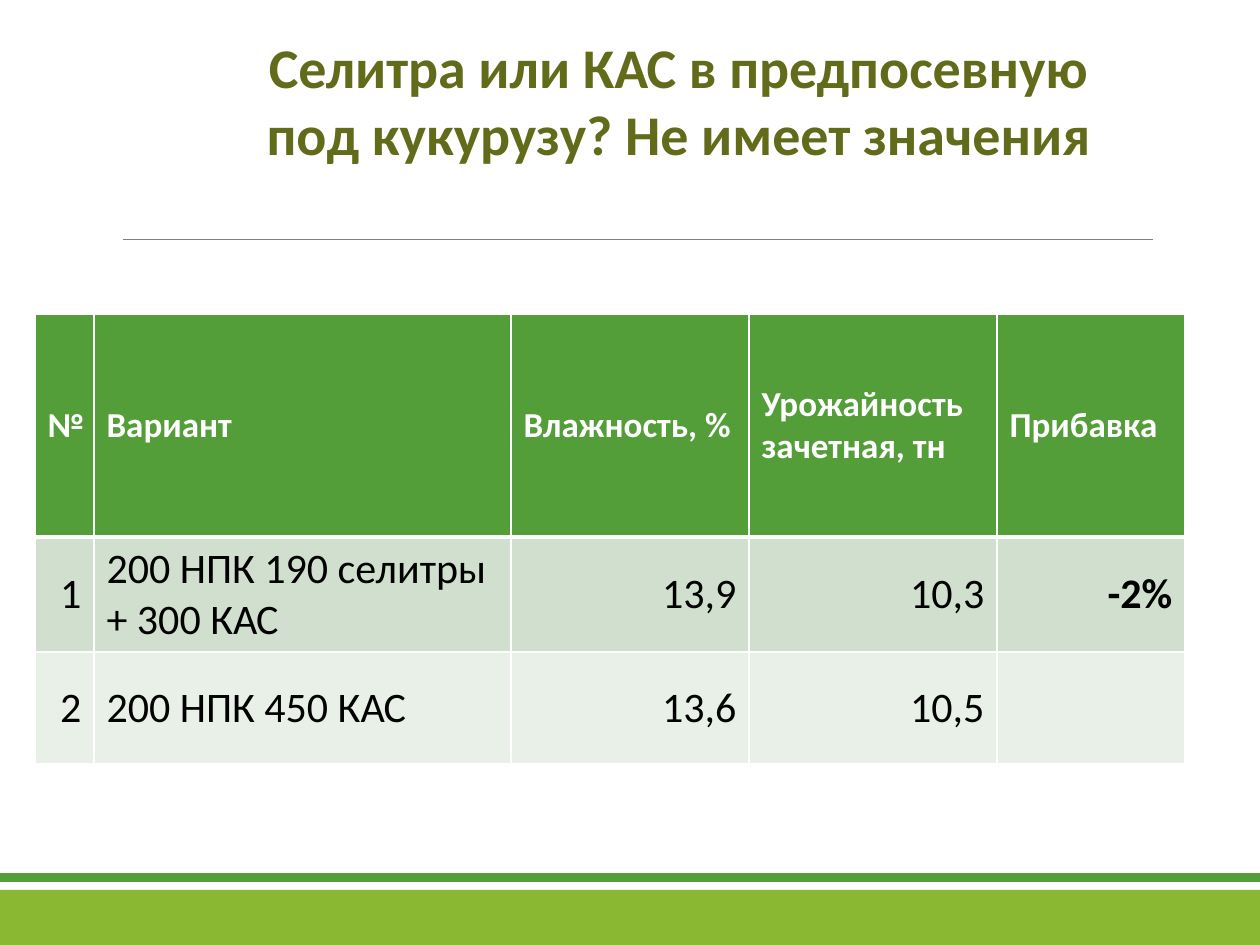
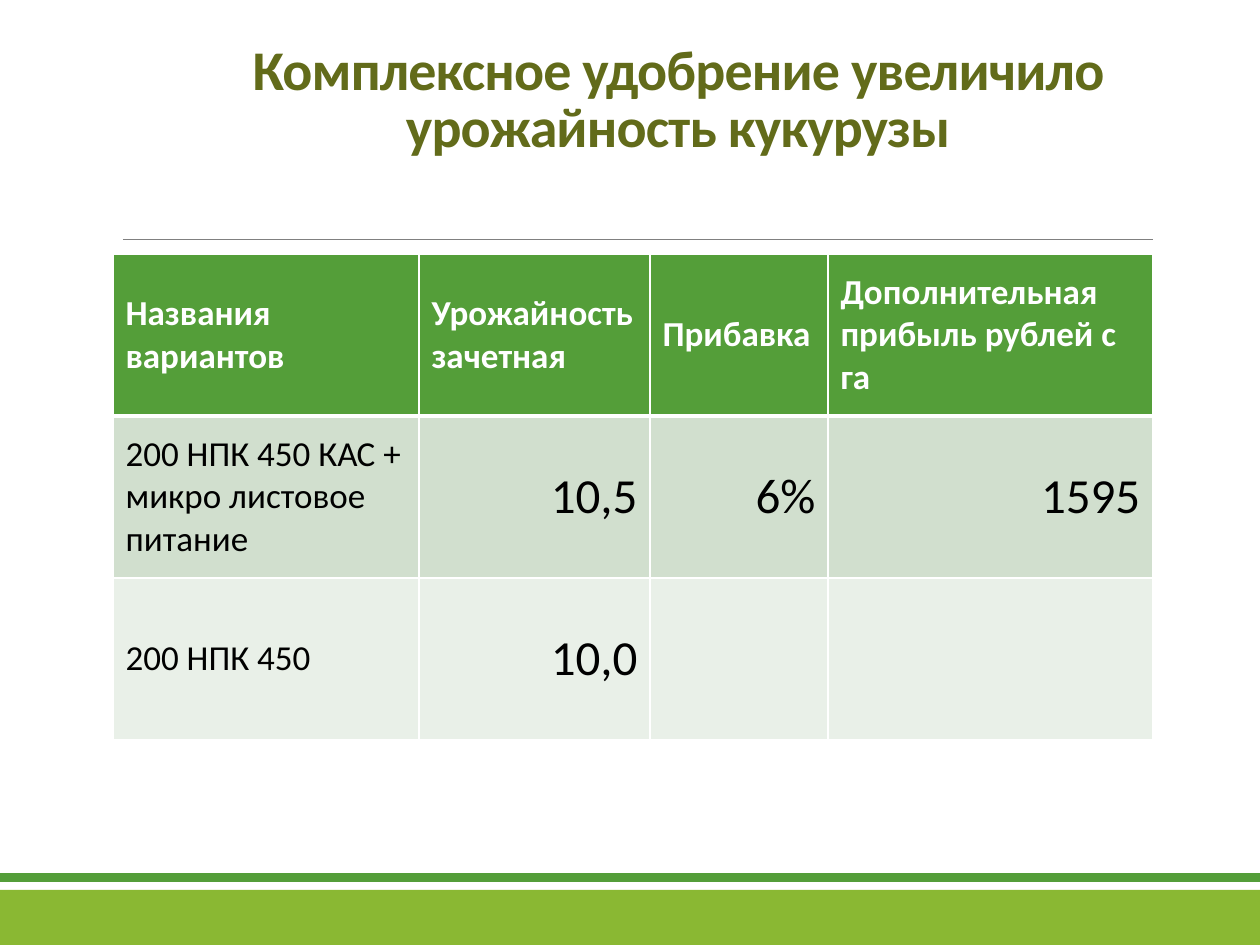
from lxml.etree import SubElement
from pptx import Presentation
from pptx.dml.color import RGBColor
from pptx.enum.shapes import MSO_CONNECTOR, MSO_SHAPE
from pptx.enum.text import MSO_ANCHOR, MSO_AUTO_SIZE, PP_ALIGN
from pptx.oxml.ns import qn
from pptx.util import Emu, Pt

FONT = "Calibri"
OLIVE = RGBColor(0x62, 0x6B, 0x1A)
GREEN = RGBColor(0x54, 0x9E, 0x39)
LIME = RGBColor(0x8A, 0xB8, 0x33)
GRAY = RGBColor(0x80, 0x80, 0x80)
WHITE = RGBColor(0xFF, 0xFF, 0xFF)
BLACK = RGBColor(0, 0, 0)
ROW_TINTS = (RGBColor(0xD1, 0xDF, 0xCE), RGBColor(0xE9, 0xF0, 0xE8))

LEFT, RIGHT = PP_ALIGN.LEFT, PP_ALIGN.RIGHT
WIDTH, HEIGHT = 1260, 945
BANDS = ((890, 55, LIME), (873, 9, GREEN))  # top, height, colour
RULE = (123, 1153, 239)  # left, right, y

# Each column: heading, width, alignment, text size, bold
SLIDES = [
    {
        "title": "Селитра или КАС в предпосевную под кукурузу? Не имеет значения",
        "title_box": (223, 26, 912, 149),
        "anchor": MSO_ANCHOR.TOP,
        "line_spacing": 1.0,
        "tracking": 0,
        "table_at": (35, 314),
        "row_heights": (223, 112, 112),
        "columns": [
            ("№", 59, RIGHT, 24, False),
            ("Вариант", 417, LEFT, 24, False),
            ("Влажность, %", 238, RIGHT, 24, False),
            ("Урожайность зачетная, тн", 248, RIGHT, 24, False),
            ("Прибавка", 188, RIGHT, 24, True),
        ],
        "rows": [
            ("1", "200 НПК 190 селитры + 300 КАС", "13,9", "10,3", "-2%"),
            ("2", "200 НПК 450 КАС", "13,6", "10,5", ""),
        ],
    },
    {
        "title": "Комплексное удобрение увеличило урожайность кукурузы",
        "title_box": (203, 39, 950, 126),
        "anchor": MSO_ANCHOR.MIDDLE,
        "line_spacing": 0.85,
        "tracking": -50,
        "table_at": (113, 254),
        "row_heights": (162, 162, 162),
        "columns": [
            ("Названия вариантов", 306, LEFT, 20, False),
            ("Урожайность зачетная", 231, RIGHT, 28, False),
            ("Прибавка", 178, RIGHT, 28, False),
            ("Дополнительная прибыль рублей с га", 325, RIGHT, 28, False),
        ],
        "rows": [
            ("200 НПК 450 КАС + микро листовое питание", "10,5", "6%", "1595"),
            ("200 НПК 450", "10,0", "", ""),
        ],
    },
]


def px(length):
    return Emu(round(length * 914400 / 126))


def format_text(paragraph, size, color, bold, align):
    paragraph.alignment = align
    for run in paragraph.runs:
        run.font.name = FONT
        run.font.size = Pt(size)
        run.font.bold = bold
        run.font.color.rgb = color


def add_bands_and_rule(slide):
    for top, height, color in BANDS:
        band = slide.shapes.add_shape(MSO_SHAPE.RECTANGLE, 0, px(top), px(WIDTH), px(height))
        band.shadow.inherit = False
        band.fill.solid()
        band.fill.fore_color.rgb = color
        band.line.fill.background()
    left, right, y = RULE
    rule = slide.shapes.add_connector(MSO_CONNECTOR.STRAIGHT, px(left), px(y), px(right), px(y))
    rule.line.color.rgb = GRAY
    rule.line.width = Pt(0.5)
    SubElement(rule._element.spPr, qn("a:effectLst"))


def set_title(slide, content):
    title = slide.shapes.title
    title.left, title.top, title.width, title.height = map(px, content["title_box"])
    frame = title.text_frame
    frame.text = content["title"]
    frame.word_wrap = True
    frame.auto_size = MSO_AUTO_SIZE.NONE
    frame.vertical_anchor = content["anchor"]
    heading = frame.paragraphs[0]
    heading.line_spacing = content["line_spacing"]
    format_text(heading, 32, OLIVE, True, PP_ALIGN.CENTER)
    if content["tracking"]:
        heading.runs[0]._r.get_or_add_rPr().set("spc", str(content["tracking"]))


def set_borders(cell, top, bottom):
    properties = cell._tc.get_or_add_tcPr()
    for side, points in (("L", 1), ("R", 1), ("T", top), ("B", bottom)):
        border = SubElement(properties, qn(f"a:ln{side}"), w=str(Pt(points)))
        fill = SubElement(border, qn("a:solidFill"))
        SubElement(fill, qn("a:srgbClr"), val=str(WHITE))


def add_results_table(slide, content):
    columns, heights = content["columns"], content["row_heights"]
    left, top = content["table_at"]
    width = sum(column[1] for column in columns)
    table = slide.shapes.add_table(
        len(heights), len(columns), px(left), px(top), px(width), px(sum(heights))
    ).table
    for row, height in zip(table.rows, heights):
        row.height = px(height)

    for c, (heading, column_width, align, size, bold) in enumerate(columns):
        table.columns[c].width = px(column_width)
        texts = [heading] + [row[c] for row in content["rows"]]
        for r, text in enumerate(texts):
            cell = table.cell(r, c)
            cell.text_frame.text = text
            cell.vertical_anchor = MSO_ANCHOR.MIDDLE
            set_borders(cell, top=3 if r == 1 else 1, bottom=3 if r == 0 else 1)
            cell.fill.solid()
            paragraph = cell.text_frame.paragraphs[0]
            if r == 0:
                cell.fill.fore_color.rgb = GREEN
                format_text(paragraph, 20, WHITE, True, LEFT)
            else:
                cell.fill.fore_color.rgb = ROW_TINTS[(r - 1) % 2]
                format_text(paragraph, size, BLACK, bold, align)


def main():
    deck = Presentation()
    deck.slide_width, deck.slide_height = px(WIDTH), px(HEIGHT)
    title_only = deck.slide_layouts[5]
    for content in SLIDES:
        slide = deck.slides.add_slide(title_only)
        add_bands_and_rule(slide)
        set_title(slide, content)
        add_results_table(slide, content)
    deck.save("out.pptx")


if __name__ == "__main__":
    main()
